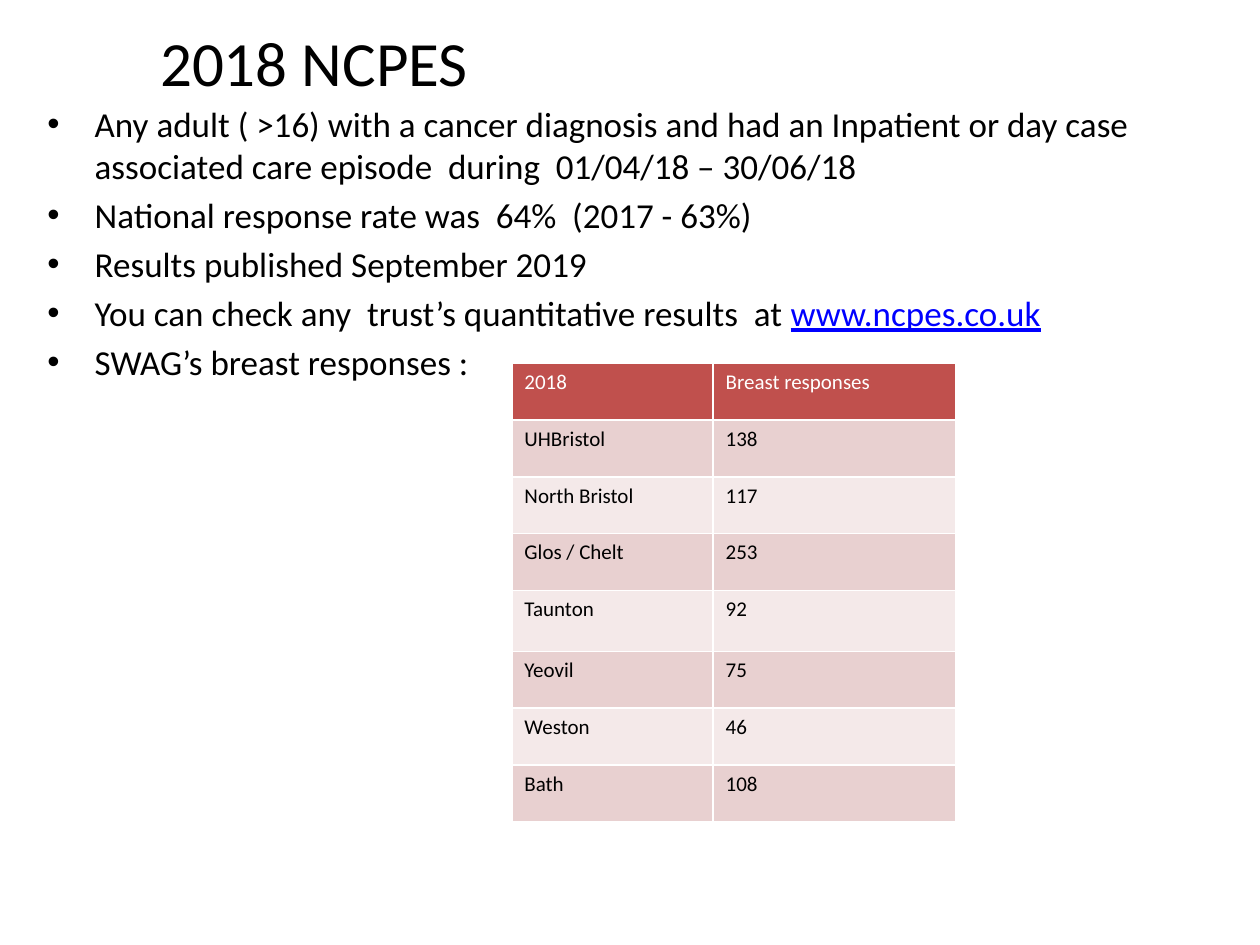
"""Build the 2018 NCPES slide: survey facts and a table of breast responses."""
from lxml import etree
from pptx import Presentation
from pptx.dml.color import RGBColor
from pptx.enum.text import MSO_ANCHOR, PP_ALIGN
from pptx.oxml.ns import qn
from pptx.util import Pt

CENTER = PP_ALIGN.CENTER
MIDDLE = MSO_ANCHOR.MIDDLE
BLACK = RGBColor(0x00, 0x00, 0x00)
WHITE = RGBColor(0xFF, 0xFF, 0xFF)
LINK_BLUE = RGBColor(0x00, 0x00, 0xFF)
HEADER_RED = RGBColor(0xC0, 0x50, 0x4D)
BANDS = [RGBColor(0xF4, 0xE9, 0xE9), RGBColor(0xE8, 0xD0, 0xD0)]
FONT = "Calibri"
INDENT = Pt(27)

FACTS = [
    ["Any adult ( >16) with a cancer diagnosis and had an Inpatient or day case "
     "associated care episode  during  01/04/18 – 30/06/18"],
    ["National response rate was  64%  (2017 - 63%)"],
    ["Results published September 2019"],
    ["You can check any  trust’s quantitative results  at ", "www.ncpes.co.uk"],
    ["SWAG’s breast responses :"],
]
RESPONSES = [
    ("2018", "Breast responses"),
    ("UHBristol", "138"),
    ("North Bristol", "117"),
    ("Glos / Chelt", "253"),
    ("Taunton", "92"),
    ("Yeovil", "75"),
    ("Weston", "46"),
    ("Bath", "108"),
]
COLUMN_WIDTHS = [115, 138.5]
ROW_HEIGHTS = [32.5] * 4 + [34.75] + [32.5] * 3


def add_span(para, text, size, color):
    span = para.add_run()
    span.text = text
    span.font.name = FONT
    span.font.size = Pt(size)
    span.font.bold = False
    span.font.color.rgb = color
    return span


deck = Presentation()
deck.slide_width, deck.slide_height = Pt(720), Pt(540)
page = deck.slides.add_slide(deck.slide_layouts[5])

title = page.shapes.title
title.left, title.top, title.width, title.height = Pt(48), Pt(9.5), Pt(263), Pt(51)
title.text_frame.vertical_anchor = MIDDLE
title_para = title.text_frame.paragraphs[0]
title_para.alignment = CENTER
add_span(title_para, "2018 NCPES", 36, BLACK)

box = page.shapes.add_textbox(Pt(20), Pt(55), Pt(680.5), Pt(427.5))
frame = box.text_frame
frame.word_wrap = True
for index, texts in enumerate(FACTS):
    para = frame.add_paragraph() if index else frame.paragraphs[0]
    para.space_before = Pt(4)
    properties = para._p.get_or_add_pPr()
    properties.set("marL", str(INDENT))
    properties.set("indent", str(-INDENT))
    etree.SubElement(properties, qn("a:buFont"), typeface="Arial")
    etree.SubElement(properties, qn("a:buChar"), char="•")
    for text in texts:
        is_address = text.startswith("www.")
        span = add_span(para, text, 20, LINK_BLUE if is_address else BLACK)
        span.font.underline = is_address

table = page.shapes.add_table(
    len(RESPONSES), len(COLUMN_WIDTHS), Pt(292.5), Pt(207.5),
    Pt(sum(COLUMN_WIDTHS)), Pt(sum(ROW_HEIGHTS))).table
for column, width in zip(table.columns, COLUMN_WIDTHS):
    column.width = Pt(width)
for row_index, (row, height) in enumerate(zip(table.rows, ROW_HEIGHTS)):
    row.height = Pt(height)
    is_header = row_index == 0
    for cell, text in zip(row.cells, RESPONSES[row_index]):
        cell.fill.solid()
        cell.fill.fore_color.rgb = HEADER_RED if is_header else BANDS[row_index % 2]
        add_span(cell.text_frame.paragraphs[0], text, 12, WHITE if is_header else BLACK)

deck.save("out.pptx")
